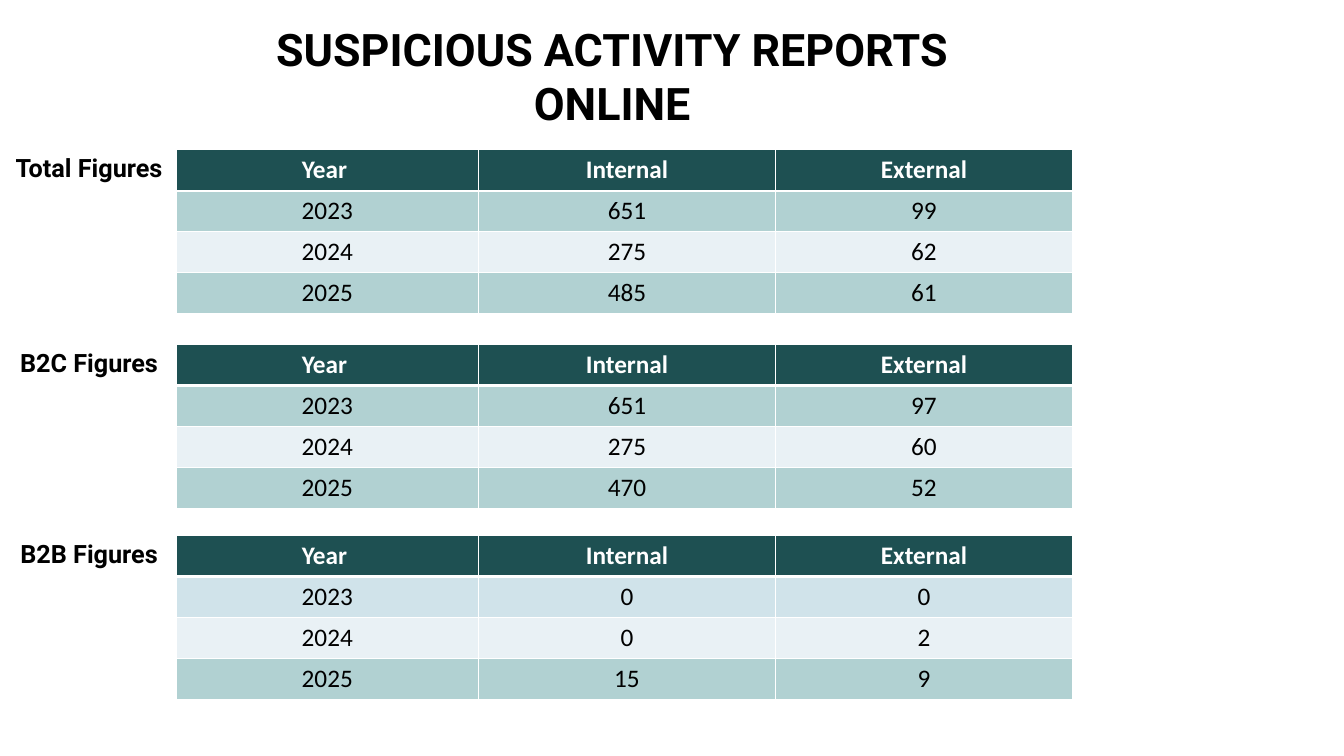
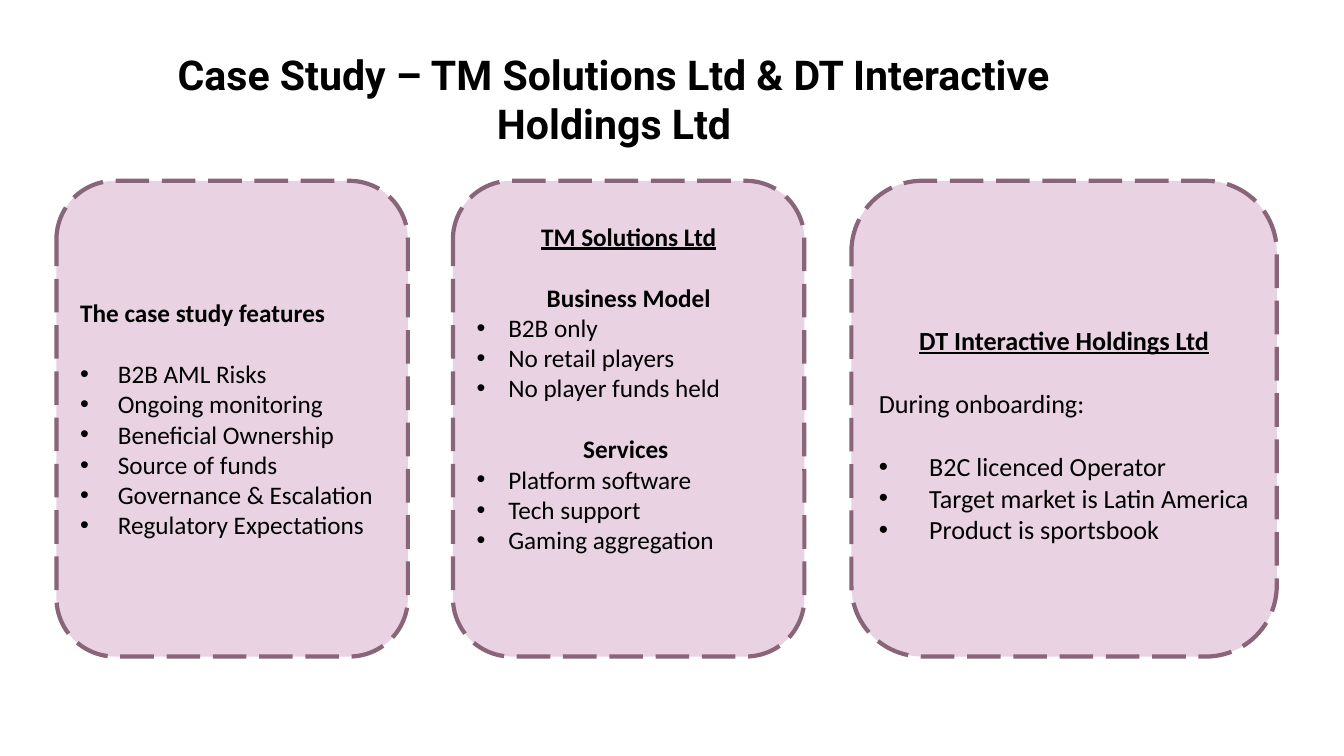
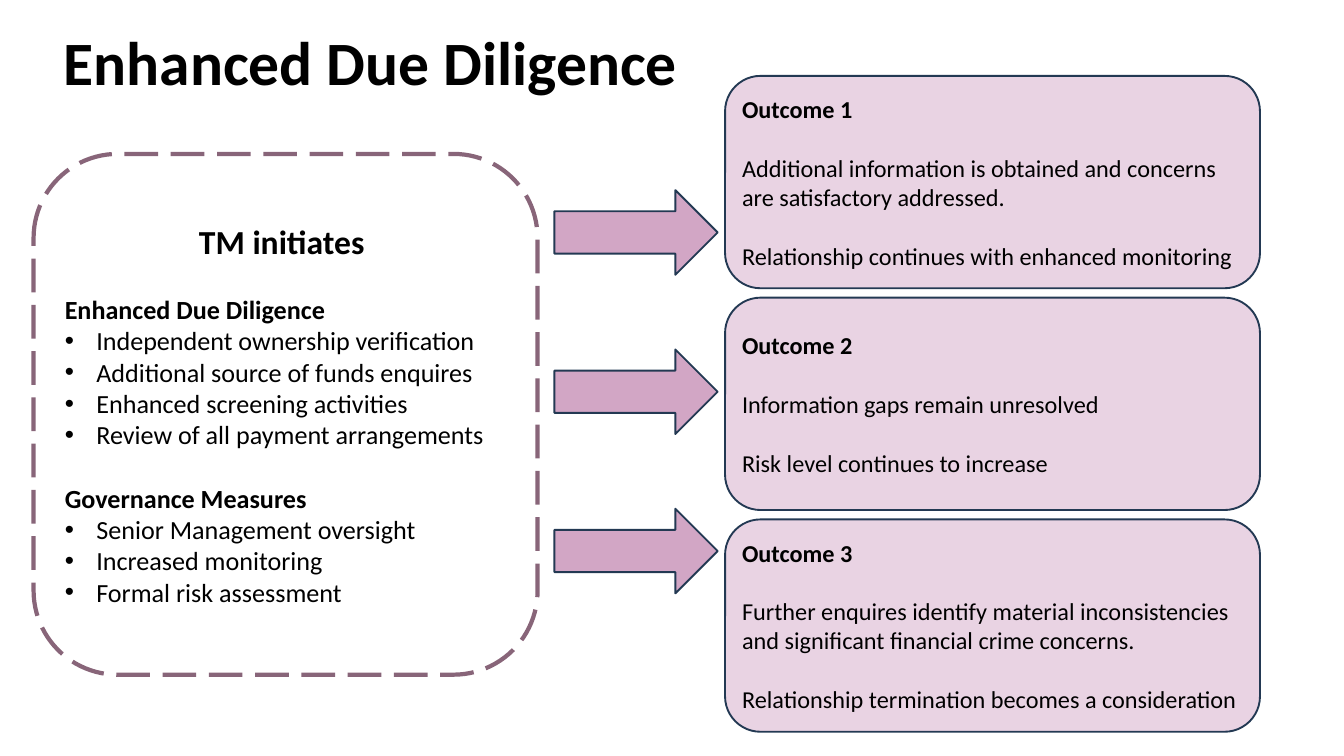
from lxml import etree
from pptx import Presentation
from pptx.dml.color import RGBColor
from pptx.enum.dml import MSO_LINE
from pptx.enum.shapes import MSO_SHAPE
from pptx.enum.text import MSO_ANCHOR, PP_ALIGN
from pptx.oxml.ns import qn
from pptx.util import Inches, Pt

ROUND, ARROW = MSO_SHAPE.ROUNDED_RECTANGLE, MSO_SHAPE.RIGHT_ARROW
DASH = MSO_LINE.LONG_DASH
LEFT, MID = PP_ALIGN.LEFT, PP_ALIGN.CENTER
TOP, CENTRE, BASE = MSO_ANCHOR.TOP, MSO_ANCHOR.MIDDLE, MSO_ANCHOR.BOTTOM

BODY, HEAD = "Calibri", "Roboto"
BLACK, WHITE = "000000", "FFFFFF"
TEAL, MINT, PALE, SKY = "1E5052", "B1D1D2", "E9F1F5", "D0E3EA"
PINK, ROSE, PLUM, NAVY = "E9D3E3", "D2A6C5", "886579", "233953"
LINE = 1.22

STYLES = {
    "head": (LEFT, True, False),
    "mid": (MID, True, False),
    "under": (MID, True, True),
    "plain": (LEFT, False, False),
    "dot": (LEFT, False, False),
}

REPORTS = ["SUSPICIOUS ACTIVITY REPORTS", "ONLINE"]
COLS = ["Year ", "Internal", "External"]
WIDTHS = [4.5, 4.42, 4.42]
FIGURES = [
    ("Total Figures", 2.23, [MINT, PALE, MINT],
     [("2023", "651", "99"), ("2024", "275", "62"), ("2025", "485", "61")]),
    ("B2C Figures", 5.13, [MINT, PALE, MINT],
     [("2023", "651", "97"), ("2024", "275", "60"), ("2025", "470", "52")]),
    ("B2B Figures", 7.97, [SKY, PALE, MINT],
     [("2023", "0", "0"), ("2024", "0", "2"), ("2025", "15", "9")]),
]

STUDY = "Case Study – TM Solutions Ltd & DT Interactive Holdings Ltd"
CARDS = [
    dict(left=0.84, width=5.23, size=27, indent=0.56, pad=(0, 0), groups=[
        [("head", "The case study features")],
        [("dot", "B2B AML Risks"), ("dot", "Ongoing monitoring"),
         ("dot", "Beneficial Ownership"), ("dot", "Source of funds"),
         ("dot", "Governance & Escalation"),
         ("dot", "Regulatory Expectations")],
    ]),
    dict(left=6.74, width=5.23, size=27, indent=0.47, pad=(0, 2), groups=[
        [("under", "TM Solutions Ltd")],
        [("mid", "Business Model"), ("dot", "B2B only"),
         ("dot", "No retail players"), ("dot", "No player funds held")],
        [("mid", "Services "), ("dot", "Platform software"),
         ("dot", "Tech support"), ("dot", "Gaming aggregation")],
    ]),
    dict(left=12.67, width=6.33, size=28, indent=0.75, pad=(1, 0), groups=[
        [("under", "DT Interactive Holdings Ltd")],
        [("plain", "During onboarding:")],
        [("dot", "B2C licenced Operator"),
         ("dot", "Target market is Latin America"),
         ("dot", "Product is sportsbook")],
    ]),
]

CHECKS = "Enhanced Due Diligence"
STEPS = [
    [("mid", "TM initiates ", 36)],
    [("head", "Enhanced Due Diligence"),
     ("dot", "Independent ownership verification"),
     ("dot", "Additional source of funds enquires"),
     ("dot", "Enhanced screening activities"),
     ("dot", "Review of all payment arrangements")],
    [("head", "Governance Measures"), ("dot", "Senior Management oversight"),
     ("dot", "Increased monitoring"), ("dot", "Formal risk assessment")],
]
RESULTS = [
    ("Outcome 1",
     "Additional information is obtained and concerns are satisfactory addressed.",
     "Relationship continues with enhanced monitoring"),
    ("Outcome 2", "Information gaps remain unresolved",
     "Risk level continues to increase"),
    ("Outcome 3",
     "Further enquires identify material inconsistencies and significant "
     "financial crime concerns.",
     "Relationship termination becomes a consideration"),
]


def tint(code):
    return RGBColor.from_string(code)


def write(para, text, size, face=BODY, color=BLACK, style="mid"):
    align, bold, under = STYLES[style]
    para.alignment = align
    run = para.add_run()
    run.text = text
    font = run.font
    font.name, font.size = face, Pt(size)
    font.bold, font.underline = bold, under
    font.color.rgb = tint(color)


def bullet(para, indent):
    props = para._p.get_or_add_pPr()
    props.set("marL", str(Inches(indent)))
    props.set("indent", str(-Inches(indent)))
    etree.SubElement(props, qn("a:buFont")).set("typeface", "Arial")
    etree.SubElement(props, qn("a:buChar")).set("char", "•")


def label(slide, box, lines, size, face=HEAD, style="mid", anchor=TOP, wrap=True):
    frame = slide.shapes.add_textbox(*map(Inches, box)).text_frame
    frame.word_wrap, frame.vertical_anchor = wrap, anchor
    for i, line in enumerate(lines):
        para = frame.add_paragraph() if i else frame.paragraphs[0]
        write(para, line, size, face, style=style)


def block(slide, kind, box, fill, line, weight, dash=None):
    shape = slide.shapes.add_shape(kind, *map(Inches, box))
    shape.shadow.inherit = False
    if fill:
        shape.fill.solid()
        shape.fill.fore_color.rgb = tint(fill)
    else:
        shape.fill.background()
    shape.line.color.rgb = tint(line)
    shape.line.width = Pt(weight)
    if dash:
        shape.line.dash_style = dash
    return shape


def fill_text(shape, groups, size, indent=0.47, pad=(0, 0)):
    frame = shape.text_frame
    frame.word_wrap, frame.vertical_anchor = True, CENTRE
    gap = Pt(size * LINE)
    frame.margin_top, frame.margin_bottom = [Inches(0.05) + n * gap for n in pad]
    for g, group in enumerate(groups):
        for i, (style, text, *own) in enumerate(group):
            first = g == 0 and i == 0
            para = frame.paragraphs[0] if first else frame.add_paragraph()
            if style == "dot":
                bullet(para, indent)
            if g and i == 0:
                para.space_before = gap
            write(para, text, own[0] if own else size, style=style)


def edge(cell, side, weight):
    line = etree.SubElement(cell._tc.get_or_add_tcPr(), qn("a:ln" + side))
    line.set("w", str(Pt(weight)))
    solid = etree.SubElement(line, qn("a:solidFill"))
    etree.SubElement(solid, qn("a:srgbClr")).set("val", WHITE)


def grid(slide, top, fills, rows):
    rows, fills = [COLS] + rows, [TEAL] + fills
    box = map(Inches, (2.62, top, sum(WIDTHS), 0.61 * len(rows)))
    table = slide.shapes.add_table(len(rows), len(COLS), *box).table
    for col, width in zip(table.columns, WIDTHS):
        col.width = Inches(width)
    for r, row in enumerate(rows):
        table.rows[r].height = Inches(0.61)
        for c, text in enumerate(row):
            cell = table.cell(r, c)
            cell.margin_left = cell.margin_right = Inches(0.15)
            cell.margin_top = cell.margin_bottom = Inches(0.07)
            for side in "LRTB":
                thick = (r, side) in ((0, "B"), (1, "T"))
                edge(cell, side, 3 if thick else 1)
            cell.fill.solid()
            cell.fill.fore_color.rgb = tint(fills[r])
            para = cell.text_frame.paragraphs[0]
            write(para, text, 27, color=BLACK if r else WHITE,
                  style="plain" if r else "mid")
            para.alignment = MID


def reports(slide):
    label(slide, (0, 0.28, 18.22, 1.72), REPORTS, 48)
    for name, top, fills, rows in FIGURES:
        grid(slide, top, fills, rows)
        label(slide, (0, top - 0.01, 2.65, 0.56), [name], 27, wrap=False)


def study(slide):
    label(slide, (1.35, 0.33, 15.58, 1.92), [STUDY], 44, anchor=BASE)
    for card in CARDS:
        box = (card["left"], 2.69, card["width"], 7.08)
        shape = block(slide, ROUND, box, PINK, PLUM, 4.5, DASH)
        fill_text(shape, card["groups"], card["size"], card["indent"], card["pad"])


def checks(slide):
    panel = block(slide, ROUND, (0.5, 2.29, 7.5, 7.75), None, PLUM, 4.5, DASH)
    fill_text(panel, STEPS, 28)
    label(slide, (0.85, 0.3, 15.1, 1.21), [CHECKS], 66, BODY, "head")
    for i, (name, *notes) in enumerate(RESULTS):
        block(slide, ARROW, (8.25, 2.83 + 2.37 * i, 2.43, 1.26), ROSE, NAVY, 2)
        box = (10.79, 1.13 + 3.3 * i, 7.96, 3.16)
        shape = block(slide, ROUND, box, PINK, NAVY, 2)
        groups = [[("head", name)]] + [[("plain", note)] for note in notes]
        fill_text(shape, groups, 26)


def main():
    deck = Presentation()
    deck.slide_width, deck.slide_height = Inches(20), Inches(11.25)
    for draw in (reports, study, checks):
        draw(deck.slides.add_slide(deck.slide_layouts[6]))
    deck.save("out.pptx")


if __name__ == "__main__":
    main()
